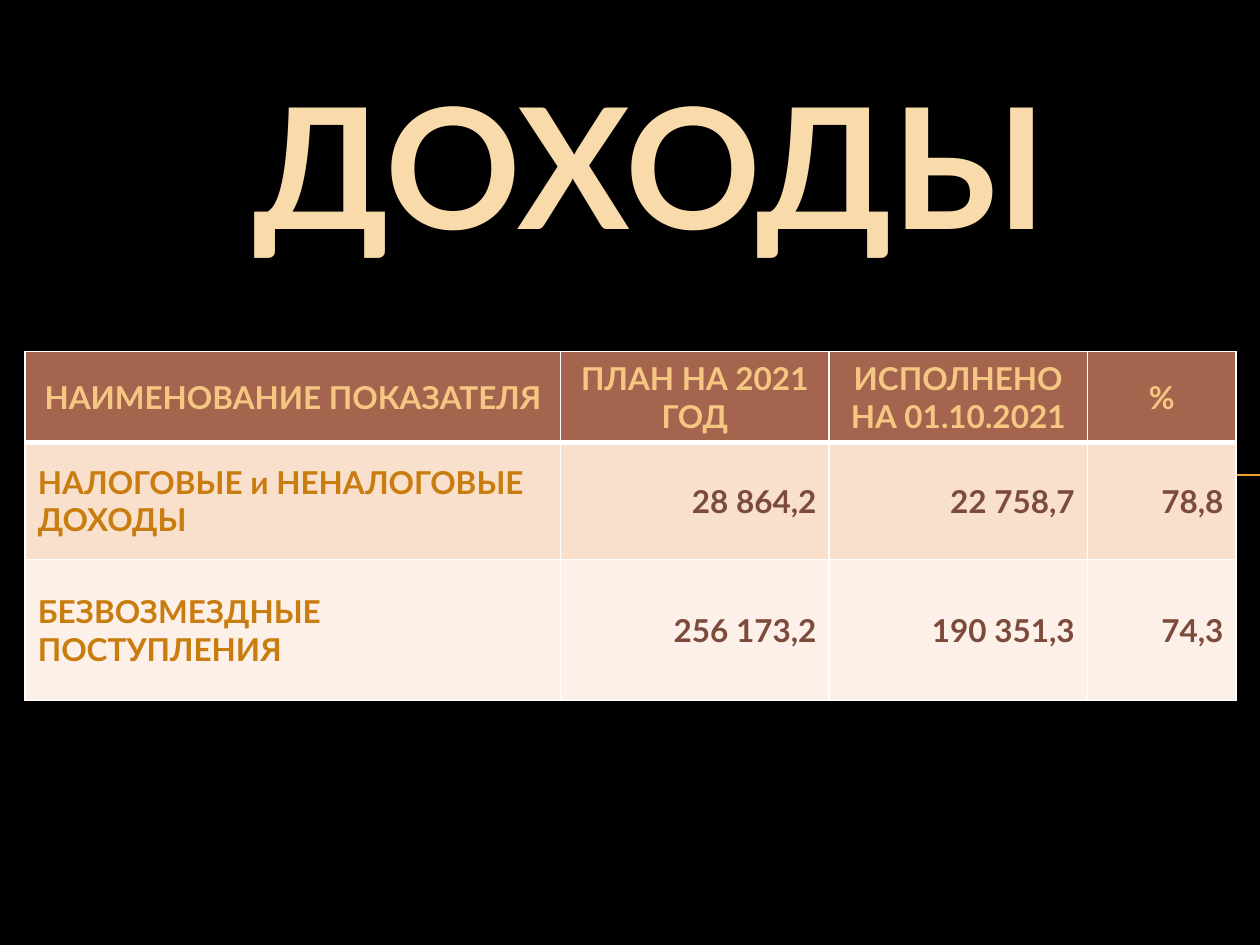
import pptx
import pptx.util
import pptx.dml.color
import pptx.enum.shapes
import pptx.enum.text
import pptx.oxml.ns
import lxml.etree

Inches = pptx.util.Inches
Pt = pptx.util.Pt
RGBColor = pptx.dml.color.RGBColor
PP_ALIGN = pptx.enum.text.PP_ALIGN
MIDDLE = pptx.enum.text.MSO_ANCHOR.MIDDLE
qn = pptx.oxml.ns.qn

BLACK = RGBColor(0x00, 0x00, 0x00)
WHITE = RGBColor(0xFF, 0xFF, 0xFF)
ORANGE = RGBColor(0xF0, 0xA2, 0x2E)
CREAM = RGBColor(0xF9, 0xDA, 0xAB)
SAND = RGBColor(0xF6, 0xC7, 0x82)
AMBER = RGBColor(0xC8, 0x7D, 0x0E)
BROWN = RGBColor(0x7C, 0x4B, 0x3B)
RUST = RGBColor(0xA5, 0x64, 0x4E)
PEACH = RGBColor(0xF9, 0xE0, 0xCD)
PALE_PEACH = RGBColor(0xFC, 0xF0, 0xE8)


def add_text(paragraph, text, size, color, alignment):
    paragraph.alignment = alignment
    run = paragraph.add_run()
    run.text = text
    run.font.name = "Lato"
    run.font.size = Pt(size)
    run.font.bold = True
    run.font.color.rgb = color


def add_borders(cell, widths):
    properties = cell._tc.get_or_add_tcPr()
    for position, (side, width) in enumerate(widths.items()):
        border = lxml.etree.Element(qn(f"a:{side}"), w=str(Pt(width)))
        fill = lxml.etree.SubElement(border, qn("a:solidFill"))
        lxml.etree.SubElement(fill, qn("a:srgbClr"), val=str(WHITE))
        properties.insert(position, border)


presentation = pptx.Presentation()
presentation.slide_width = Inches(10)
presentation.slide_height = Inches(7.5)
slide = presentation.slides.add_slide(presentation.slide_layouts[5])
slide.background.fill.solid()
slide.background.fill.fore_color.rgb = BLACK

rule = slide.shapes.add_connector(
    pptx.enum.shapes.MSO_CONNECTOR.STRAIGHT,
    Inches(0.56), Inches(3.77), Inches(10), Inches(3.77))
rule.line.color.rgb = ORANGE
rule.line.width = Pt(0.75)
lxml.etree.SubElement(rule._element.spPr, qn("a:effectLst"))

title = slide.shapes.title
title.left, title.top = Inches(0.91), Inches(0.44)
title.width, title.height = Inches(8.5), Inches(1.49)
title.text_frame.vertical_anchor = pptx.enum.text.MSO_ANCHOR.TOP
title.text_frame.auto_size = pptx.enum.text.MSO_AUTO_SIZE.NONE
add_text(title.text_frame.paragraphs[0], "ДОХОДЫ", 96, CREAM, PP_ALIGN.CENTER)

income_rows = [
    ["НАИМЕНОВАНИЕ ПОКАЗАТЕЛЯ", "ПЛАН НА 2021 ГОД", "ИСПОЛНЕНО НА 01.10.2021", "%"],
    ["НАЛОГОВЫЕ и НЕНАЛОГОВЫЕ ДОХОДЫ", "28 864,2", "22 758,7", "78,8"],
    ["БЕЗВОЗМЕЗДНЫЕ ПОСТУПЛЕНИЯ", "256 173,2", "190 351,3", "74,3"],
]
column_widths = [4.25, 2.13, 2.05, 1.18]
row_heights = [0.72, 0.93, 1.12]
row_fills = [RUST, PEACH, PALE_PEACH]

income = slide.shapes.add_table(
    len(income_rows), len(column_widths), Inches(0.2), Inches(2.79),
    Inches(sum(column_widths)), Inches(sum(row_heights))).table
for column, width in zip(income.columns, column_widths):
    column.width = Inches(width)

for r, (values, height, row_fill) in enumerate(zip(income_rows, row_heights, row_fills)):
    income.rows[r].height = Inches(height)
    for c, value in enumerate(values):
        cell = income.cell(r, c)
        cell.vertical_anchor = MIDDLE
        cell.fill.solid()
        cell.fill.fore_color.rgb = row_fill
        add_borders(cell, {"lnL": 1, "lnR": 1,
                           "lnT": 3 if r == 1 else 1,
                           "lnB": 3 if r == 0 else 1})
        if r == 0:
            color, alignment = SAND, PP_ALIGN.CENTER
        elif c == 0:
            color, alignment = AMBER, PP_ALIGN.LEFT
        else:
            color, alignment = BROWN, PP_ALIGN.RIGHT
        add_text(cell.text_frame.paragraphs[0], value, 18, color, alignment)

presentation.save("out.pptx")
